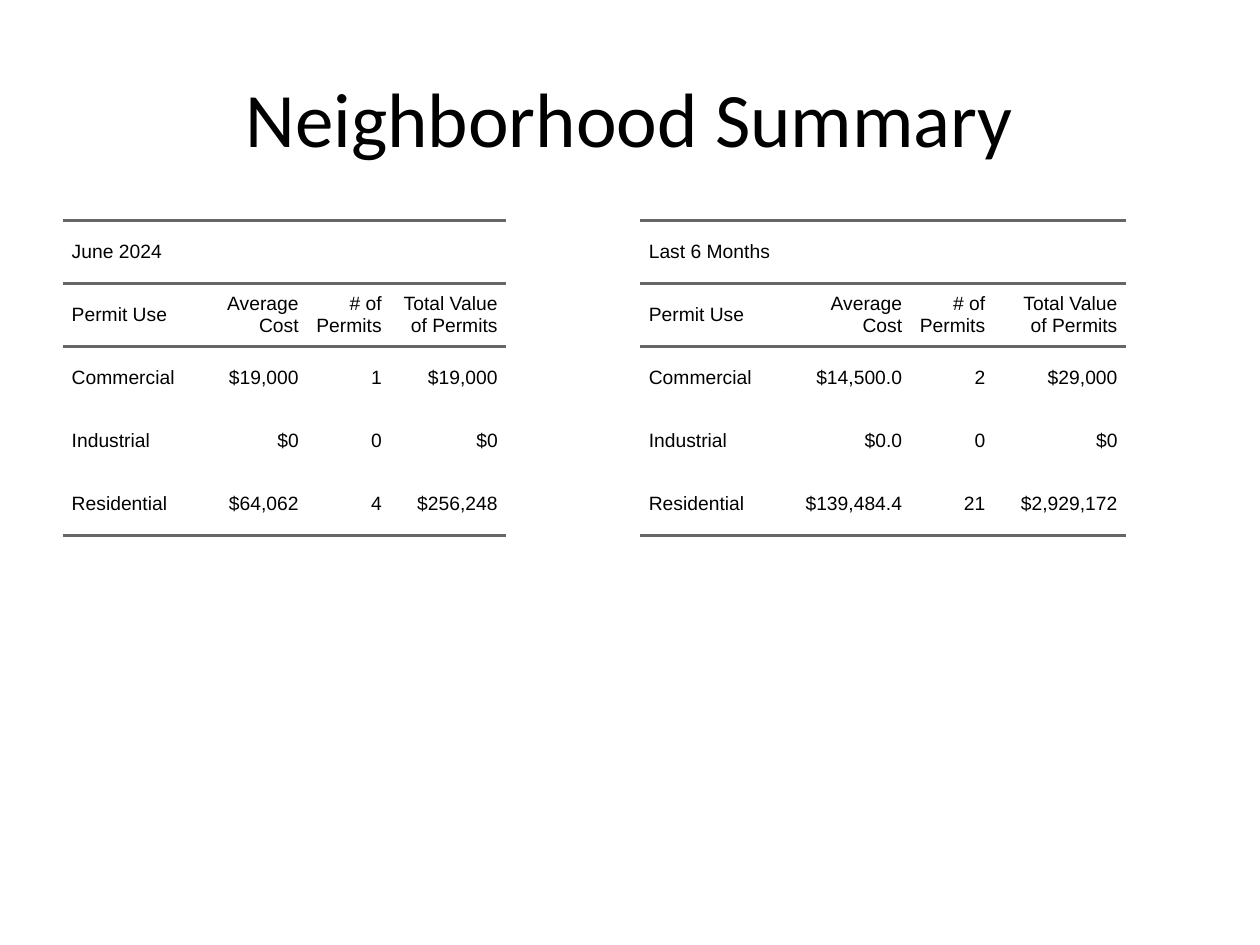
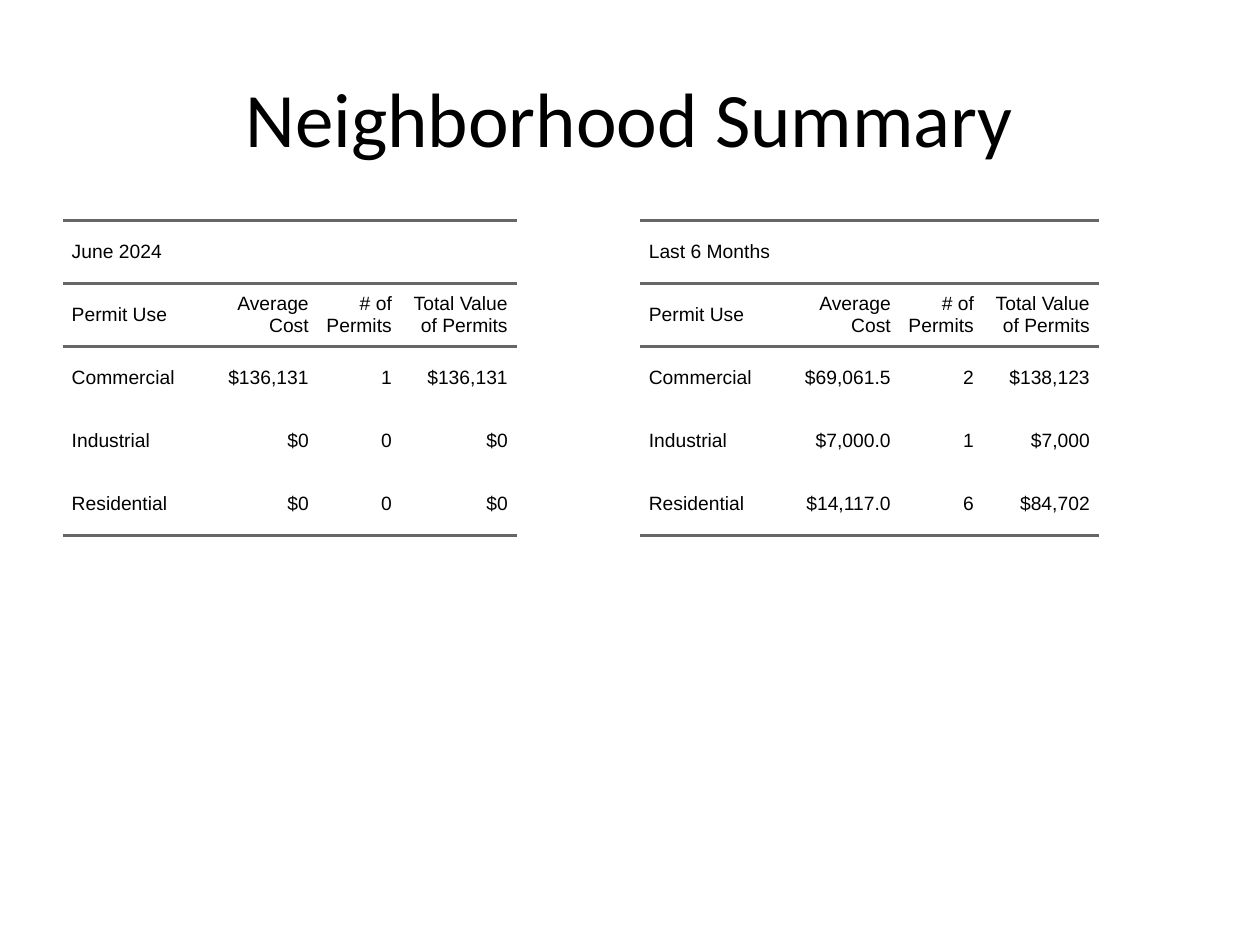
from dataclasses import dataclass

from lxml.etree import SubElement
from pptx import Presentation
from pptx.dml.color import RGBColor
from pptx.enum.text import MSO_ANCHOR, PP_ALIGN
from pptx.oxml.ns import qn
from pptx.util import Pt


@dataclass(frozen=True)
class Theme:
    """Colours, fonts and sizes shared by the slides."""

    ink: str = "000000"
    rule: str = "666666"
    title_font: str = "Calibri"
    table_font: str = "Arial"
    title_size: float = 44
    table_size: float = 11
    rule_width: float = 1.5
    padding: float = 5
    row_height: float = 36
    plain_table: str = "{2D5ABB26-0587-4C30-8999-92F81FD0307C}"


THEME = Theme()
TITLE_BOX = (36, 21.6, 648, 90)
TABLE_BOXES = ((36, 126, 318.25, 356.4), (365.75, 126, 318.25, 356.4))
PERIODS = ("June 2024", "Last 6 Months")
HEADINGS = ("Permit Use", "Average Cost", "# of Permits", "Total Value of Permits")
PERMIT_USES = ("Commercial", "Industrial", "Residential")
USE_WIDTH, COUNT_WIDTH = 79.2, 47.5

NEIGHBORHOODS = (
    (
        ((60.5, 66.25), (("$19,000", "1", "$19,000"),
                         ("$0", "0", "$0"),
                         ("$64,062", "4", "$256,248"))),
        ((75.6, 75.6), (("$14,500.0", "2", "$29,000"),
                        ("$0.0", "0", "$0"),
                        ("$139,484.4", "21", "$2,929,172"))),
    ),
    (
        ((66.25, 66.25), (("$136,131", "1", "$136,131"),
                          ("$0", "0", "$0"),
                          ("$0", "0", "$0"))),
        ((69.1, 66.25), (("$69,061.5", "2", "$138,123"),
                         ("$7,000.0", "1", "$7,000"),
                         ("$14,117.0", "6", "$84,702"))),
    ),
)


def write(paragraph, text, font, size):
    """Add one run in the theme's ink."""
    run = paragraph.add_run()
    run.text = text
    run.font.name = font
    run.font.size = Pt(size)
    run.font.color.rgb = RGBColor.from_string(THEME.ink)


def rule_cell(cell, sides):
    """Draw a rule on each named side of a cell."""
    properties = cell._tc.get_or_add_tcPr()
    for side in sides:
        line = SubElement(properties, qn(f"a:ln{side}"), w=str(Pt(THEME.rule_width)))
        fill = SubElement(line, qn("a:solidFill"))
        SubElement(fill, qn("a:srgbClr"), val=THEME.rule)


def fill_cell(cell, text, align):
    """Write a cell's text with the table's spacing and indents."""
    cell.vertical_anchor = MSO_ANCHOR.MIDDLE
    cell.margin_left = cell.margin_right = Pt(0)
    cell.margin_top = cell.margin_bottom = Pt(THEME.padding)
    paragraph = cell.text_frame.paragraphs[0]
    paragraph.alignment = align
    paragraph.space_before = paragraph.space_after = Pt(THEME.padding)
    indents = paragraph._p.get_or_add_pPr()
    for name, length in (("marL", Pt(THEME.padding)), ("marR", Pt(THEME.padding)), ("indent", 0)):
        indents.set(name, str(length))
    write(paragraph, text, THEME.table_font, THEME.table_size)


def add_title(slide, box):
    """Place and format the slide title."""
    title = slide.shapes.title
    title.left, title.top, title.width, title.height = map(Pt, box)
    title.text_frame.vertical_anchor = MSO_ANCHOR.MIDDLE
    paragraph = title.text_frame.paragraphs[0]
    paragraph.alignment = PP_ALIGN.CENTER
    write(paragraph, "Neighborhood Summary", THEME.title_font, THEME.title_size)


def add_permit_table(slide, box, period, value_widths, figures):
    """Build one period's permit table in the given box."""
    rows = [(period, "", "", ""), HEADINGS]
    rows += [(use, *values) for use, values in zip(PERMIT_USES, figures)]
    frame = slide.shapes.add_table(len(rows), len(HEADINGS), *map(Pt, box))
    table = frame.table
    table.first_row = table.horz_banding = False
    next(frame._element.iter(qn("a:tableStyleId"))).text = THEME.plain_table
    cost_width, total_width = value_widths
    for column, width in zip(table.columns, (USE_WIDTH, cost_width, COUNT_WIDTH, total_width)):
        column.width = Pt(width)
    for row in table.rows:
        row.height = Pt(THEME.row_height)
    frame.width, frame.height = map(Pt, box[2:])
    table.cell(0, 0).merge(table.cell(0, len(HEADINGS) - 1))
    sides_by_row = ("TB", "TB", "", "", "B")
    for r, (texts, sides) in enumerate(zip(rows, sides_by_row)):
        for c, text in enumerate(texts):
            cell = table.cell(r, c)
            rule_cell(cell, sides)
            cell.fill.background()
            if text:
                fill_cell(cell, text, PP_ALIGN.RIGHT if c else PP_ALIGN.LEFT)


def add_summary_slide(presentation, summaries):
    """Add a neighborhood's slide with a table for each period."""
    slide = presentation.slides.add_slide(presentation.slide_layouts[5])
    add_title(slide, TITLE_BOX)
    for box, period, (value_widths, figures) in zip(TABLE_BOXES, PERIODS, summaries):
        add_permit_table(slide, box, period, value_widths, figures)


def main():
    """Build and save the presentation."""
    presentation = Presentation()
    presentation.slide_width, presentation.slide_height = Pt(720), Pt(540)
    for summaries in NEIGHBORHOODS:
        add_summary_slide(presentation, summaries)
    presentation.save("out.pptx")


if __name__ == "__main__":
    main()
